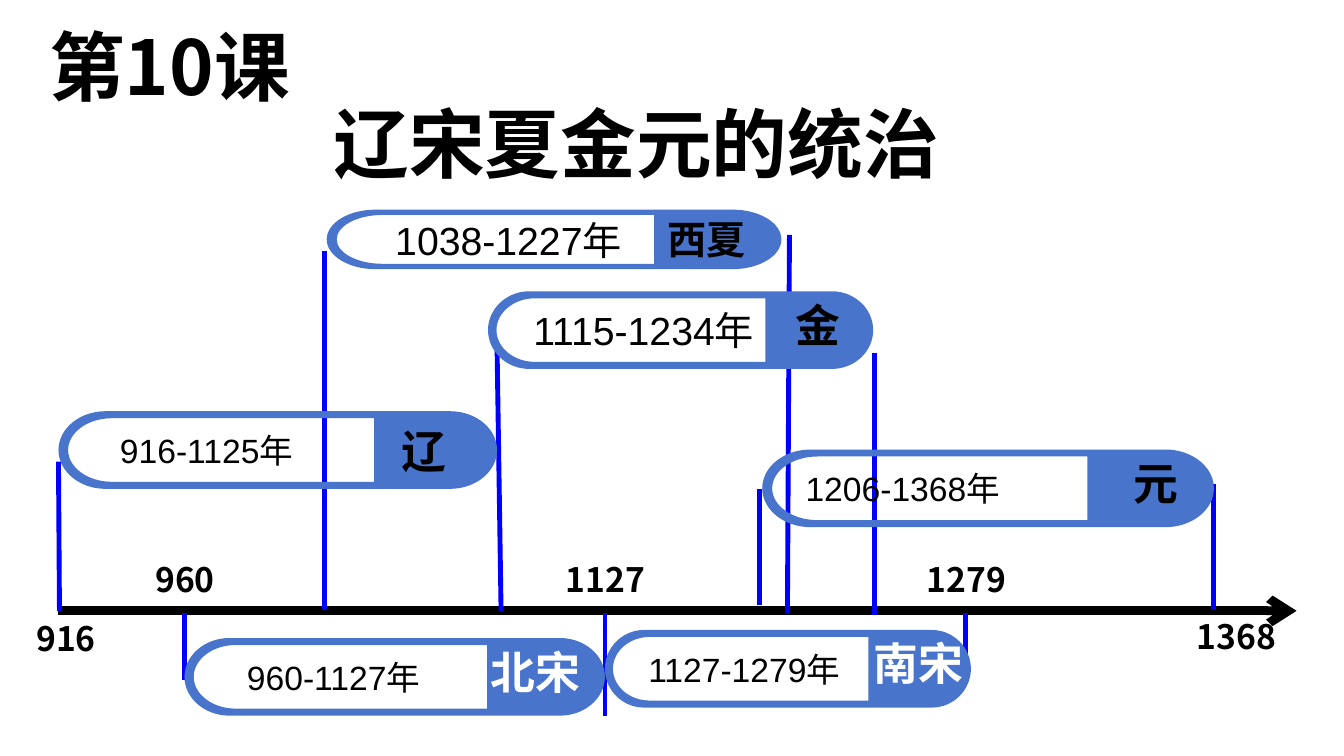
from dataclasses import dataclass

import lxml.etree
import pptx
import pptx.dml.color
import pptx.enum.shapes
import pptx.enum.text
import pptx.oxml.ns
import pptx.util

Inches = pptx.util.Inches
qn = pptx.oxml.ns.qn
ANCHOR = pptx.enum.text.MSO_ANCHOR
ALIGN = pptx.enum.text.PP_ALIGN


@dataclass(frozen=True)
class Theme:
    black: str = "000000"
    white: str = "FFFFFF"
    pill: str = "4874CB"
    marker: str = "0000FF"
    heading_font: str = "Noto Sans CJK SC"
    body_font: str = "Arial"
    title_size: int = 54
    name_size: int = 32
    large_size: int = 28
    year_size: int = 24
    axis_width: float = 6.25
    marker_width: float = 3.5


THEME = Theme()

ARC_RATIO = 0.55
FLAT_START_ARCS = (2, 5, 11)
TIP_START_ARCS = (3, 6, 12)

AXIS = (0.58, 6.06, 12.86, 6.06)
MARKERS = [
    (0.58, 4.58, 0.59, 6.06),
    (1.83, 6.08, 1.83, 6.75),
    (3.22, 2.49, 3.22, 6.05),
    (7.83, 2.33, 7.81, 6.08),
    (6, 6.08, 6, 7.1),
    (8.67, 3.5, 8.67, 6.1),
    (9.58, 6.08, 9.58, 6.75),
    (4.93, 3.45, 4.97, 6.06),
    (12.04, 4.8, 12.04, 6.05),
    (7.53, 4.85, 7.53, 6),
]
YEARS = [
    ("916", 0.25, 6.08, 0.81),
    ("1368", 11.66, 6.06, 1.21),
    ("960", 1.43, 5.5, 0.81),
    ("1279", 8.98, 5.5, 1.21),
    ("1127", 5.4, 5.5, 1.21),
]
NAME, LARGE, YEAR = THEME.name_size, THEME.large_size, THEME.year_size
DYNASTIES = [
    ("北宋", "960-1127年", (1.83, 6.33, 4.17, 0.77), 0.62, YEAR, (2.79, 0.07, 1.38), NAME, THEME.white),
    ("南宋", "1127-1279年", (6, 6.25, 3.63, 0.77), 0.43, YEAR, (2.51, 0.06, 1.2), NAME, THEME.white),
    ("元", "1206-1368年", (7.56, 4.46, 4.48, 0.77), 0.43, YEAR, (3.11, 0.06, 1.59), NAME, THEME.black),
    ("辽", "916-1125年", (0.58, 4.08, 4.35, 0.77), 0.61, YEAR, (2.88, 0.12, 1.5), NAME, THEME.black),
    ("西夏", "1038-1227年", (3.24, 2.08, 4.51, 0.59), 0.68, LARGE, (2.97, 0.06, 1.59), LARGE, THEME.black),
    ("金", "1115-1234年", (4.84, 2.89, 3.82, 0.77), 0.45, LARGE, (2.64, 0.06, 1.26), NAME, THEME.black),
]


def rgb(color):
    return pptx.dml.color.RGBColor.from_string(color)


def write(sp, text, font, size, color, bold=True, align=ALIGN.LEFT,
          anchor=ANCHOR.TOP, margins=(0.1, 0.05, 0.1, 0.05)):
    tf = sp.text_frame
    tf.text = text
    tf.word_wrap = True
    tf.auto_size = pptx.enum.text.MSO_AUTO_SIZE.NONE
    tf.vertical_anchor = anchor
    tf.margin_left, tf.margin_top, tf.margin_right, tf.margin_bottom = map(Inches, margins)
    p = tf.paragraphs[0]
    p.alignment = align
    p.line_spacing = 1.0
    r = p.runs[0]
    r.font.name = font
    r.font.size = pptx.util.Pt(size)
    r.font.bold = bold
    r.font.color.rgb = rgb(color)
    lxml.etree.SubElement(r.font._element, qn("a:ea")).set("typeface", font)


def add_text(s, box, text, *style, **options):
    sp = s.shapes.add_textbox(*map(Inches, box))
    write(sp, text, *style, **options)


def add_line(s, ends, color, width, arrow=False):
    line = s.shapes.add_connector(
        pptx.enum.shapes.MSO_CONNECTOR.STRAIGHT, *map(Inches, ends))
    line.line.color.rgb = rgb(color)
    line.line.width = pptx.util.Pt(width)
    if arrow:
        ln = line.line._get_or_add_ln()
        lxml.etree.SubElement(ln, qn("a:tailEnd")).set("type", "arrow")
    lxml.etree.SubElement(line._element.spPr, qn("a:effectLst"))


def add_heading(s, box):
    x, y, w, h = box
    title = s.shapes.title
    title.left, title.top, title.width, title.height = map(Inches, (x + 2.82, y + 0.76, w - 2.82, h))
    style = (THEME.heading_font, THEME.title_size, THEME.black)
    write(title, "辽宋夏金元的统治", *style)
    add_text(s, (x, y, 2.6, h), "第10课", *style)


def add_timeline(s):
    add_line(s, AXIS, THEME.black, THEME.axis_width, arrow=True)
    for ends in MARKERS:
        add_line(s, ends, THEME.marker, THEME.marker_width)
    for year, x, y, w in YEARS:
        add_text(s, (x, y, w, 0.5), year, THEME.heading_font, THEME.year_size,
                 THEME.black, align=ALIGN.CENTER)


def round_ends(sp):
    pts = list(sp._element.iter(qn("a:pt")))
    places = [(int(pt.get("x")), int(pt.get("y"))) for pt in pts]
    for i in FLAT_START_ARCS + TIP_START_ARCS:
        start, end = places[i - 1], places[i]
        corner = (end[0], start[1]) if i in FLAT_START_ARCS else (start[0], end[1])
        segment = pts[i].getparent()
        curve = lxml.etree.Element(qn("a:cubicBezTo"))
        for near in (start, end):
            control = lxml.etree.SubElement(curve, qn("a:pt"))
            for axis, a, b in zip("xy", near, corner):
                control.set(axis, str(round(a + ARC_RATIO * (b - a))))
        curve.append(pts[i])
        segment.getparent().replace(segment, curve)


def add_pill(s, box):
    x, y, w, h = box
    right, bottom, cy, rx = x + w, y + h, y + h / 2, 0.107 * w
    edge, split = x + 0.022 * w, x + 0.72 * w
    top, base = y + 0.09 * h, bottom - 0.09 * h
    outline = [(x + rx, y), (right - rx, y), (right, cy), (right - rx, bottom),
               (x + rx, bottom), (x, cy), (x + rx, y)]
    window = [(edge + 0.1 * w, top), (split, top), (split, base),
              (edge + 0.1 * w, base), (edge, cy), (edge + 0.1 * w, top)]
    builder = s.shapes.build_freeform(*map(Inches, outline[0]))
    builder.add_line_segments([tuple(map(Inches, pt)) for pt in outline[1:]])
    builder.move_to(*map(Inches, window[0]))
    builder.add_line_segments([tuple(map(Inches, pt)) for pt in window[1:]])
    sp = builder.convert_to_shape()
    round_ends(sp)
    sp.shadow.inherit = False
    sp.fill.solid()
    sp.fill.fore_color.rgb = rgb(THEME.pill)
    sp.line.fill.background()
    return sp


def add_dynasty(s, box, name, years, indent, years_size, label, name_size, name_color):
    sp = add_pill(s, box)
    write(sp, years, THEME.body_font, years_size, THEME.black, bold=False,
          anchor=ANCHOR.MIDDLE, margins=(indent, 0, 0, 0))
    dx, dy, w = label
    add_text(s, (box[0] + dx, box[1] + dy, w, 0.54), name, THEME.body_font, name_size,
             name_color, align=ALIGN.CENTER, margins=(0, 0, 0, 0))


def main():
    prs = pptx.Presentation()
    prs.slide_width, prs.slide_height = Inches(13.33), Inches(7.5)
    s = prs.slides.add_slide(prs.slide_layouts[5])
    s.background.fill.solid()
    s.background.fill.fore_color.rgb = rgb(THEME.white)
    add_heading(s, (0.39, 0.15, 11.74, 1.01))
    add_timeline(s)
    for name, years, box, *style in DYNASTIES:
        add_dynasty(s, box, name, years, *style)
    prs.save("out.pptx")


if __name__ == "__main__":
    main()
